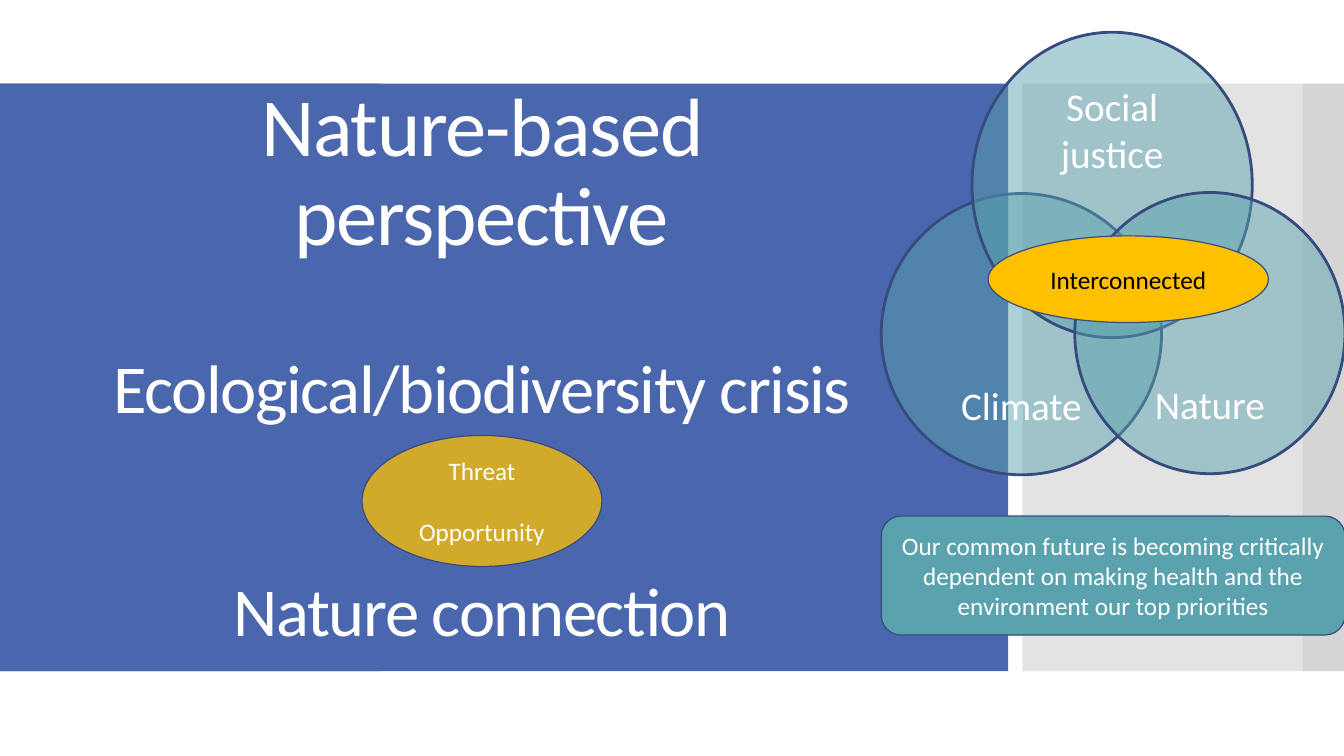
from pptx import Presentation
from pptx import util as u
from pptx.dml.color import RGBColor
from pptx.enum import shapes, text
from pptx.oxml.ns import qn
from lxml import etree

BLUE = RGBColor(0x4A, 0x66, 0xAC)
NAVY = RGBColor(0x37, 0x4B, 0x7F)
GREY = RGBColor(0xC8, 0xC8, 0xC8)
TEAL = RGBColor(0x5A, 0xA2, 0xAE)
GOLD = RGBColor(0xFF, 0xC0, 0x00)
WHITE = RGBColor(0xFF, 0xFF, 0xFF)
BLACK = RGBColor(0, 0, 0)

FONT = "Calibri"
KIND = shapes.MSO_SHAPE
TOP, MID, LOW = (text.MSO_ANCHOR.TOP, text.MSO_ANCHOR.MIDDLE,
                 text.MSO_ANCHOR.BOTTOM)


def write(frame, lines, color=WHITE, anchor=MID, track=0):
    """Fill a frame with centred (words, size, space before) lines."""
    frame.word_wrap = True
    frame.vertical_anchor = anchor
    for i, (words, size, gap) in enumerate(lines):
        para = frame.paragraphs[0] if i == 0 else frame.add_paragraph()
        para.alignment = text.PP_ALIGN.CENTER
        para.space_before = u.Pt(gap)
        run = para.add_run()
        run.text = words
        run.font.name = FONT
        run.font.size = u.Pt(size)
        run.font.color.rgb = color
        if track:
            run._r.get_or_add_rPr().set("spc", str(track))


def draw(slide, kind, box, fill, alpha=100, line=0):
    """Add a flat shape; a line width of 0 means no outline."""
    shape = slide.shapes.add_shape(kind, *map(u.Inches, box))
    shape.shadow.inherit = False
    shape.fill.solid()
    shape.fill.fore_color.rgb = fill
    if alpha < 100:
        tint = shape._element.spPr.find(qn("a:solidFill"))[0]
        etree.SubElement(tint, qn("a:alpha")).set("val", str(alpha * 1000))
    if line:
        shape.line.color.rgb = NAVY
        shape.line.width = u.Pt(line)
    else:
        shape.line.fill.background()
    return shape


def add_bands(slide, box):
    x, y, w, h = box
    # Each band: left offset, width, colour, opacity
    for dx, wide, fill, alpha in ((0, 3.77, BLUE, 100),
                                  (w - 0.42, 0.42, GREY, 50),
                                  (0, 10, BLUE, 100),
                                  (w - 3.2, 3.2, GREY, 50)):
        draw(slide, KIND.RECTANGLE, (x + dx, y, wide, h), fill, alpha)


def add_title(slide, box):
    x, y, w, h = box
    area = slide.shapes.add_textbox(*map(u.Inches, box))
    write(area.text_frame, [("Nature-based perspective", 59, 0),
                            ("Ecological/biodiversity crisis", 49, 65),
                            ("Nature connection", 49, 106)],
          anchor=LOW, track=-100)
    for para in area.text_frame.paragraphs:
        para.line_spacing = 0.9

    # Badge between the two lower lines
    wide, high = 2.38, 1.3
    badge = draw(slide, KIND.OVAL,
                 (x + (w - wide) / 2, y + 3.69, wide, high), GOLD, 75, 0.85)
    write(badge.text_frame, [("Threat", 18, 0), ("Opportunity", 18, 22)])


def add_venn(slide, box):
    x, y, w, h = box
    # Each circle: label, offsets, size, text anchor
    for label, dx, dy, wide, high, anchor in (
            ("Climate", 0, 1.6, 2.78, 2.79, LOW),
            ("Social justice", 0.9, 0, 2.78, 3.03, TOP),
            ("Nature", w - 2.68, 1.59, 2.68, 2.79, LOW)):
        ring = draw(slide, KIND.OVAL, (x + dx, y + dy, wide, high),
                    TEAL, 49, 2)
        write(ring.text_frame, [(label, 28, 0)], anchor=anchor)

    # Shared centre
    core = draw(slide, KIND.OVAL, (x + 1.06, y + 2.02, 2.78, 0.86),
                GOLD, line=0.85)
    write(core.text_frame, [("Interconnected", 18, 0)], BLACK)


def add_note(slide, box):
    note = draw(slide, KIND.ROUNDED_RECTANGLE, box, TEAL, line=0.85)
    write(note.text_frame, [("Our common future is becoming critically "
                             "dependent on making health and the "
                             "environment our top priorities", 18, 0)])


def main():
    deck = Presentation()
    deck.slide_width = u.Inches(13.33)
    deck.slide_height = u.Inches(7.5)
    slide = deck.slides.add_slide(deck.slide_layouts[6])
    add_bands(slide, (0, 0.83, 13.34, 5.83))
    add_title(slide, (0.66, 0.63, 8.24, 5.88))
    add_venn(slide, (8.74, 0.32, 4.6, 4.39))
    add_note(slide, (8.74, 5.12, 4.6, 1.18))
    deck.save("out.pptx")


if __name__ == "__main__":
    main()
